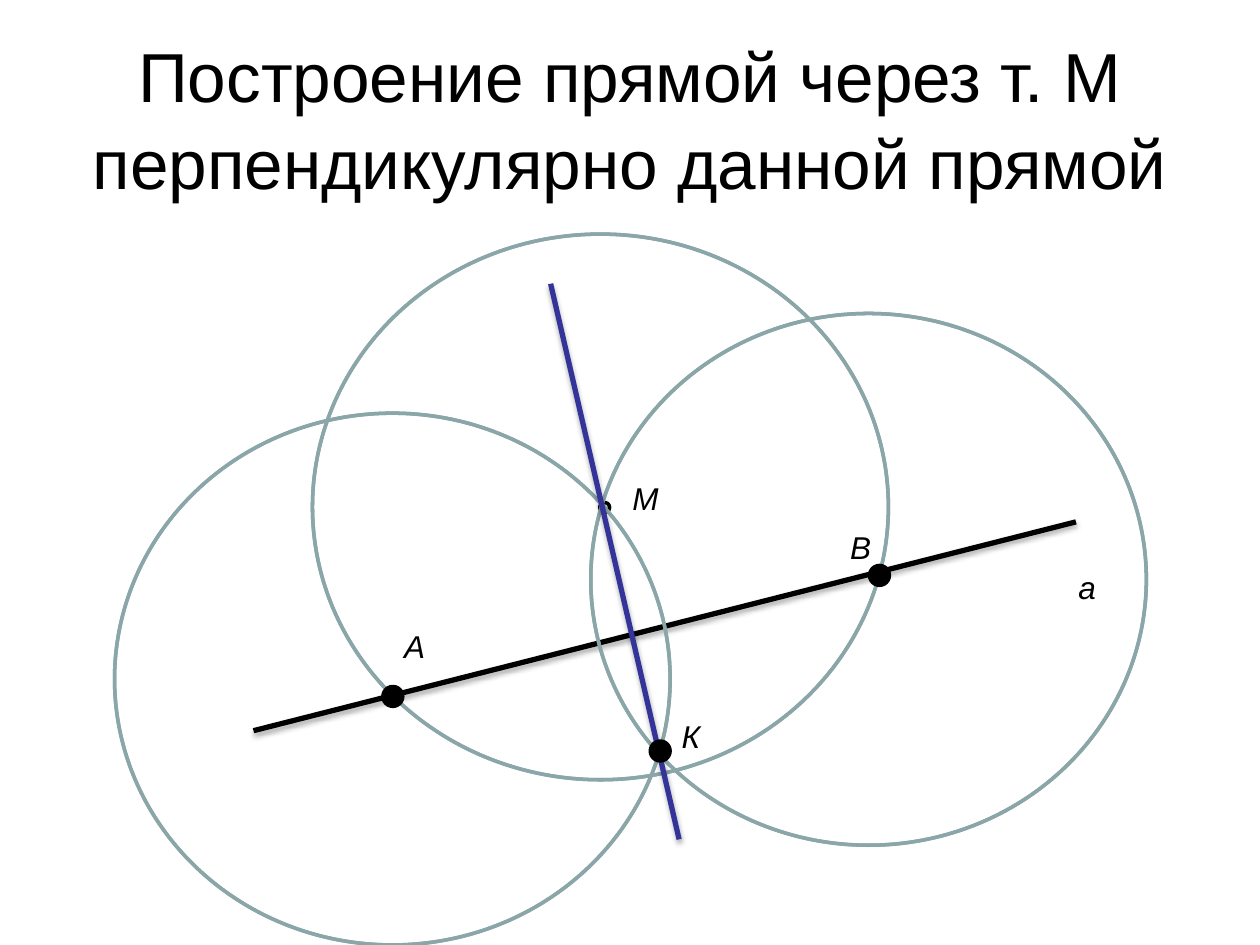
from dataclasses import dataclass

from lxml.etree import SubElement
from pptx import Presentation
from pptx.dml.color import RGBColor as RGB
from pptx.enum.shapes import MSO_CONNECTOR as Connector, MSO_SHAPE as Shape
from pptx.enum.text import MSO_ANCHOR as Anchor, PP_ALIGN as Align
from pptx.oxml.ns import qn
from pptx.util import Cm, Pt


@dataclass(frozen=True)
class Theme:
    font: str = "Arial"
    ink: RGB = RGB.from_string("000000")
    pale: RGB = RGB.from_string("BBE0E3")
    circle: RGB = RGB.from_string("8AA6A8")
    perpendicular: RGB = RGB.from_string("333399")
    title_size: Pt = Pt(39.6)
    label_size: Pt = Pt(18)
    outline: Pt = Pt(2)
    stroke: Pt = Pt(3)


theme = Theme()
prs = Presentation()
prs.slide_width, prs.slide_height = Cm(25.4), Cm(19.05)
slide = prs.slides.add_slide(prs.slide_layouts[6])


def add_round(kind, left, top, width, height, fill, line):
    figure = slide.shapes.add_shape(kind, Cm(left), Cm(top), Cm(width), Cm(height))
    figure.shadow.inherit = False
    figure.fill.solid()
    figure.fill.fore_color.rgb = fill
    figure.line.color.rgb = line
    figure.line.width = theme.outline
    return figure


def add_line(x1, y1, x2, y2, color):
    line = slide.shapes.add_connector(Connector.STRAIGHT, Cm(x1), Cm(y1), Cm(x2), Cm(y2))
    line.line.color.rgb = color
    line.line.width = theme.stroke
    # Soft shadow straight below the line
    effects = SubElement(line._element.spPr, qn("a:effectLst"))
    shadow = SubElement(effects, qn("a:outerShdw"), blurRad=str(Pt(3.1)),
                        dist=str(Pt(1.8)), dir="5400000", rotWithShape="0")
    shade = SubElement(shadow, qn("a:srgbClr"), val=str(theme.ink))
    SubElement(shade, qn("a:alpha"), val="35000")


# Title
title = slide.shapes.add_textbox(Cm(1.27), Cm(0.76), Cm(22.86), Cm(3.18)).text_frame
title.word_wrap = True
title.vertical_anchor = Anchor.MIDDLE
heading = title.paragraphs[0]
heading.alignment = Align.CENTER
heading.line_spacing = 1.04
heading_run = heading.add_run()
heading_run.text = "Построение прямой через т. М перпендикулярно данной прямой"
heading_run.font.name = theme.font
heading_run.font.size = theme.title_size
heading_run.font.color.rgb = theme.ink

# Given line a and point М
add_line(5.11, 14.73, 21.69, 10.52, theme.ink)
add_round(Shape.OVAL, 12.09, 10.13, 0.2, 0.2, theme.pale, theme.ink)

# Compass circles around М, А and В
for left, top, width, height in [(6.3, 4.72, 11.61, 11), (2.31, 8.33, 11.2, 10.72),
                                 (11.91, 6.32, 11.2, 10.72)]:
    circle = add_round(Shape.DONUT, left, top, width, height, theme.pale, theme.circle)
    circle.adjustments[0] = 0

# Perpendicular through М and К
add_line(11.1, 5.72, 13.69, 16.92, theme.perpendicular)

# Letters
for letter, left, top in [("a", 21.49, 11.33), ("А", 7.9, 12.52), ("В", 16.89, 10.52),
                          ("М", 12.5, 9.53), ("К", 13.49, 14.33)]:
    label = slide.shapes.add_textbox(Cm(left), Cm(top), Cm(0.79), Cm(1.02)).text_frame
    label.word_wrap = True
    letter_run = label.paragraphs[0].add_run()
    letter_run.text = letter
    letter_run.font.name = theme.font
    letter_run.font.size = theme.label_size
    letter_run.font.italic = True
    letter_run.font.color.rgb = theme.ink

# Intersection points А, В and К
for left, top in [(7.72, 13.84), (17.53, 11.4), (13.11, 14.94)]:
    add_round(Shape.OVAL, left, top, 0.4, 0.4, theme.ink, theme.ink)

prs.save("out.pptx")
